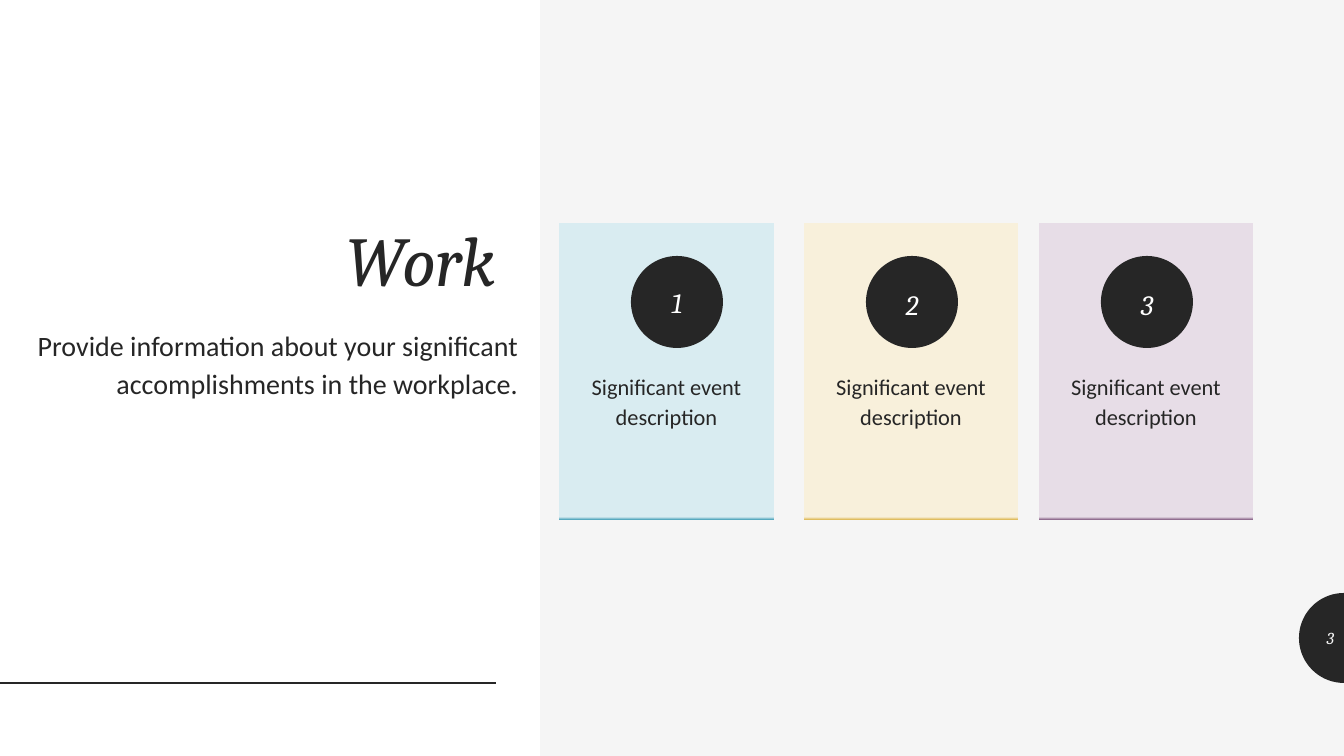
from copy import deepcopy
from math import cos, radians, sin

from pptx import Presentation
from pptx.dml.color import RGBColor
from pptx.enum.shapes import MSO_CONNECTOR, MSO_SHAPE
from pptx.enum.text import MSO_ANCHOR, PP_ALIGN
from pptx.oxml.ns import qn
from pptx.util import Pt
from lxml.etree import SubElement

UNIT = 914400 / 100.8
HEX = {
    "back": "F5F5F5", "white": "FFFFFF", "ink": "262626",
    "blue": "D9ECF1", "teal": "439EB7",
    "cream": "F8F0DB", "gold": "DCB64D",
    "lilac": "E7DDE7", "plum": "835B82",
}
CARDS = [
    (559, 215, "blue", "teal", 1.0),
    (804, 214, "cream", "gold", 1.12),
    (1039, 214, "lilac", "plum", 1.12),
]


def px(size):
    """Turn pixels into EMU."""
    return round(size * UNIT)


def tint(name):
    """Look up a named colour."""
    return RGBColor.from_string(HEX[name])


def paint(shape, color):
    """Give a shape a flat fill without line or shadow."""
    shape.shadow.inherit = False
    shape.line.fill.background()
    shape.fill.solid()
    shape.fill.fore_color.rgb = tint(color)


def write(shape, text, size, font="Calibri", color="ink", align=PP_ALIGN.CENTER,
          anchor=MSO_ANCHOR.TOP, lead=1.0, above=0):
    """Put one styled paragraph into a shape."""
    frame = shape.text_frame
    frame.word_wrap = True
    frame.vertical_anchor = anchor
    para = frame.paragraphs[0]
    para.text = text
    para.alignment = align
    para.line_spacing = lead
    para.space_before = Pt(above)
    para.font.name = font
    para.font.size = Pt(size)
    para.font.italic = font == "Cambria"
    para.font.color.rgb = tint(color)


def label(slide, box, text, size, **style):
    """Add a right-aligned text box."""
    shape = slide.shapes.add_textbox(*map(px, box))
    write(shape, text, size, align=PP_ALIGN.RIGHT, **style)


def block(slide, kind, box, color, top=0):
    """Add a plain shape with only a top inset."""
    shape = slide.shapes.add_shape(kind, *map(px, box))
    paint(shape, color)
    frame = shape.text_frame
    frame.margin_left = frame.margin_right = frame.margin_bottom = 0
    frame.margin_top = px(top)
    return shape


def card(slide, left, width, color, edge):
    """Add an event card with a coloured lower edge."""
    shape = block(slide, MSO_SHAPE.RECTANGLE, (left, 223, width, 297), color, 147)
    shape.fill.gradient()
    shape.fill.gradient_angle = 270
    first = next(shape._element.iter(qn("a:gs")))
    first.addnext(deepcopy(first))
    stops = zip(shape.fill.gradient_stops, (0, 0.99, 1), (color, color, edge))
    for stop, place, name in stops:
        stop.position = place
        stop.color.rgb = tint(name)
    write(shape, "Significant event description", 16, lead=1.12, above=9)


def disc(slide, left, text, lead):
    """Add a numbered disc."""
    shape = block(slide, MSO_SHAPE.OVAL, (left, 256, 92, 92), "ink")
    write(shape, text, 20, font="Cambria", color="white",
          anchor=MSO_ANCHOR.MIDDLE, lead=lead, above=9)


def tab(slide):
    """Add the half disc at the right edge."""
    turns = [radians(step) for step in range(90, 271, 5)]
    dots = [(px(1344 + 45 * cos(turn)), px(638 + 45 * sin(turn))) for turn in turns]
    form = slide.shapes.build_freeform(*dots[0])
    form.add_line_segments(dots[1:])
    paint(form.convert_to_shape(), "ink")


def rule(slide):
    """Add the rule at the lower left."""
    line = slide.shapes.add_connector(MSO_CONNECTOR.STRAIGHT, 0, px(683), px(496), px(683))
    line.line.color.rgb = tint("ink")
    line.line.width = Pt(2)
    SubElement(line._element.spPr, qn("a:effectLst"))


def main():
    """Build and save the slide."""
    deck = Presentation()
    deck.slide_width, deck.slide_height = px(1344), px(756)
    slide = deck.slides.add_slide(deck.slide_layouts[6])
    slide.background.fill.solid()
    slide.background.fill.fore_color.rgb = tint("back")
    tab(slide)
    block(slide, MSO_SHAPE.RECTANGLE, (0, 0, 540, 756), "white")
    rule(slide)
    label(slide, (84, 61, 422, 246), "Work", 50, font="Cambria",
          anchor=MSO_ANCHOR.BOTTOM, lead=0.9)
    for left, width, color, edge, _ in CARDS:
        card(slide, left, width, color, edge)
    for index, (*_, lead) in enumerate(CARDS):
        disc(slide, 631 + 235 * index, str(index + 1), lead)
    label(slide, (19, 320, 509, 314),
          "Provide information about your significant accomplishments in the workplace.",
          20, lead=1.12, above=9)
    label(slide, (1299, 618, 45, 40), "3", 12, font="Cambria", color="back",
          anchor=MSO_ANCHOR.MIDDLE)
    deck.save("out.pptx")


if __name__ == "__main__":
    main()
